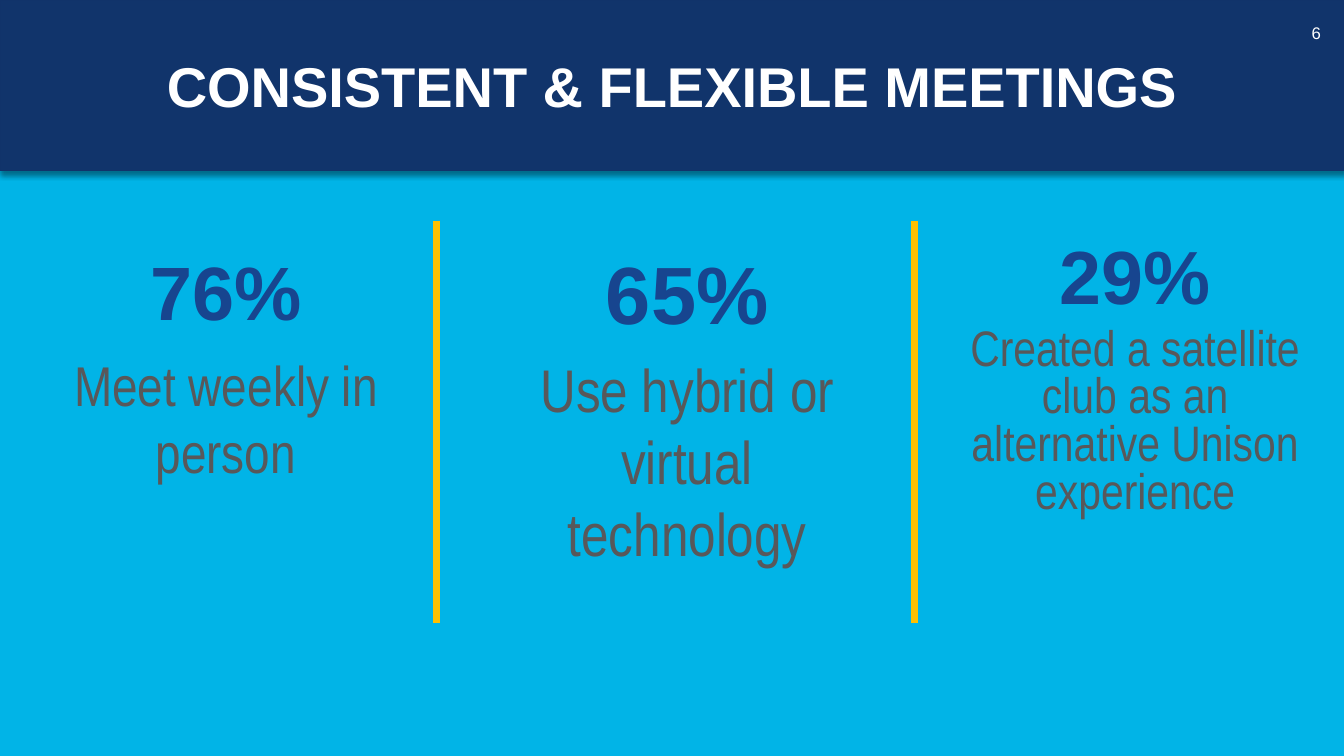
import pptx
import pptx.dml.color
import pptx.enum.shapes
import pptx.enum.text
import pptx.oxml
import pptx.oxml.ns
import pptx.util
from pptx.util import Inches

RGBColor = pptx.dml.color.RGBColor
SKY = RGBColor(0x01, 0xB4, 0xE7)
NAVY = RGBColor(0x11, 0x34, 0x6B)
NAVY_EDGE = RGBColor(0x11, 0x33, 0x6A)
ROYAL = RGBColor(0x17, 0x45, 0x8F)
GRAY = RGBColor(0x58, 0x58, 0x5A)
GOLD = RGBColor(0xFF, 0xC0, 0x00)
WHITE = RGBColor(0xFF, 0xFF, 0xFF)
ALIGN = pptx.enum.text.PP_ALIGN
ANCHOR = pptx.enum.text.MSO_ANCHOR

BAND_SHADOW = (
    '<a:effectLst %s><a:outerShdw blurRad="50800" dist="38100" dir="5400000" '
    'algn="t" rotWithShape="0"><a:srgbClr val="000000"><a:alpha val="40000"/>'
    '</a:srgbClr></a:outerShdw></a:effectLst>' % pptx.oxml.ns.nsdecls("a"))
NO_EFFECT = "<a:effectLst %s/>" % pptx.oxml.ns.nsdecls("a")

STATS = [
    ((0.34, 2.48, 3.8, 3.09), (0.1, 0.05), 10,
     ("76%", 54, 0.9), ("Meet weekly in person", 40, 1.0)),
    ((5.12, 2.48, 3.39, 3.54), (0.07, 0.04), 7.5,
     ("65%", 58, 0.9), ("Use hybrid or virtual technology", 43, 1.0)),
    ((9.53, 2.48, 3.46, 3.19), (0.07, 0.04), 7.5,
     ("29%", 53.8, 0.7),
     ("Created a satellite club as an alternative Unison experience", 35.6, 0.8)),
]


def write(paragraph, text, size, color, font="Arial", bold=False,
          align=ALIGN.CENTER, spacing=1.0, before=0):
    """Put formatted text into a paragraph."""
    paragraph.alignment = align
    paragraph.line_spacing = spacing
    paragraph.space_before = pptx.util.Pt(before)
    run = paragraph.add_run()
    run.text = text
    run.font.name = font
    run.font.size = pptx.util.Pt(size)
    run.font.bold = bold
    run.font.color.rgb = color


def set_frame(frame, insets, anchor=ANCHOR.TOP):
    """Set wrapping, insets and anchor of a text frame."""
    frame.word_wrap = True
    frame.auto_size = pptx.enum.text.MSO_AUTO_SIZE.NONE
    frame.vertical_anchor = anchor
    frame.margin_left = frame.margin_right = Inches(insets[0])
    frame.margin_top = frame.margin_bottom = Inches(insets[1])


def add_title_band(slide, left, top, width, height):
    """Turn the title placeholder into the navy band."""
    band = slide.shapes.title
    band.left, band.top = Inches(left), Inches(top)
    band.width, band.height = Inches(width), Inches(height)
    band.fill.solid()
    band.fill.fore_color.rgb = NAVY
    band.line.color.rgb = NAVY_EDGE
    band.line.width = pptx.util.Pt(1)
    band.element.spPr.append(pptx.oxml.parse_xml(BAND_SHADOW))
    set_frame(band.text_frame, (0.07, 0.04), ANCHOR.MIDDLE)
    write(band.text_frame.paragraphs[0], "CONSISTENT & FLEXIBLE MEETINGS",
          40, WHITE, bold=True)


def add_page_number(slide, left, top, width, height):
    """Place the page number in the band's corner."""
    number = slide.shapes.add_textbox(*map(Inches, (left, top, width, height)))
    set_frame(number.text_frame, (0.1, 0.05), ANCHOR.MIDDLE)
    write(number.text_frame.paragraphs[0], "6", 12, WHITE, align=ALIGN.RIGHT)


def add_stat(slide, box, insets, gap, percent, caption):
    """Place a percentage with its caption below."""
    frame = slide.shapes.add_textbox(*map(Inches, box)).text_frame
    set_frame(frame, insets)
    text, size, spacing = percent
    write(frame.paragraphs[0], text, size, ROYAL, bold=True, spacing=spacing)
    text, size, spacing = caption
    write(frame.add_paragraph(), text, size, GRAY, font="Arial Narrow",
          spacing=spacing, before=gap)


def add_divider(slide, x, top, bottom):
    """Draw a vertical gold rule between two statistics."""
    rule = slide.shapes.add_connector(
        pptx.enum.shapes.MSO_CONNECTOR.STRAIGHT,
        Inches(x), Inches(top), Inches(x), Inches(bottom))
    rule.line.color.rgb = GOLD
    rule.line.width = pptx.util.Pt(5)
    rule.element.spPr.append(pptx.oxml.parse_xml(NO_EFFECT))


def main():
    """Build and save the slide."""
    deck = pptx.Presentation()
    deck.slide_width, deck.slide_height = Inches(13.33), Inches(7.5)
    slide = deck.slides.add_slide(deck.slide_layouts[5])
    slide.background.fill.solid()
    slide.background.fill.fore_color.rgb = SKY
    add_title_band(slide, 0, 0, 13.33, 1.69)
    for stat in STATS:
        add_stat(slide, *stat)
    for x in (4.33, 9.07):
        add_divider(slide, x, 2.19, 6.18)
    add_page_number(slide, 12.74, 0.13, 0.46, 0.4)
    deck.save("out.pptx")


if __name__ == "__main__":
    main()
